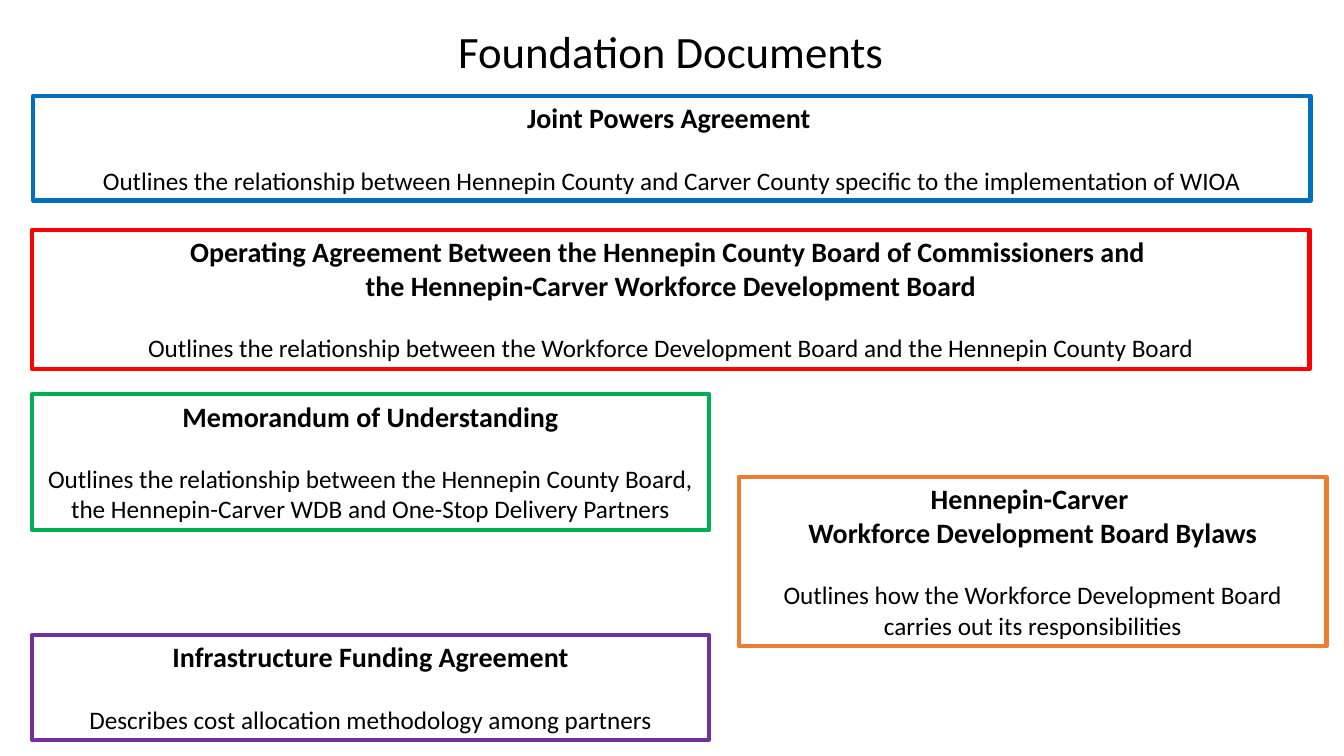
from dataclasses import dataclass

import pptx
import pptx.dml.color
import pptx.enum.shapes
import pptx.enum.text
import pptx.presentation
import pptx.shapes.autoshape
import pptx.slide
import pptx.text.text
import pptx.util


@dataclass(frozen=True)
class Theme:
    font: str = "Calibri"
    text: str = "000000"
    background: str = "FFFFFF"
    blue: str = "0070C0"
    red: str = "FF0000"
    green: str = "00B050"
    orange: str = "ED7D31"
    purple: str = "7030A0"
    title_size: int = 32
    heading_size: int = 20
    body_size: int = 18
    body_gap: int = 22
    border: int = 3


@dataclass(frozen=True)
class Area:
    """Percentages of the slide's width and height."""

    left: float
    top: float
    width: float
    height: float


@dataclass(frozen=True)
class Document:
    area: Area
    color: str
    headings: tuple[str, ...]
    description: str
    filled: bool = False


THEME = Theme()
SLIDE_WIDTH = pptx.util.Inches(13.33)
SLIDE_HEIGHT = pptx.util.Inches(7.5)
LEFT = 2.4
FULL_WIDTH = 95.03
HALF_WIDTH = 50.33
TITLE_AREA = Area(24.6, 2.53, 50.63, 8.53)

DOCUMENTS = (
    Document(
        Area(2.48, 12.67, FULL_WIDTH, 13.87),
        THEME.blue,
        ("Joint Powers Agreement ",),
        "Outlines the relationship between Hennepin County and Carver County "
        "specific to the implementation of WIOA",
        filled=True,
    ),
    Document(
        Area(LEFT, 30.4, FULL_WIDTH, 18.4),
        THEME.red,
        (
            "Operating Agreement Between the Hennepin County Board of Commissioners and ",
            "the Hennepin-Carver Workforce Development Board",
        ),
        "Outlines the relationship between the Workforce Development Board "
        "and the Hennepin County Board",
    ),
    Document(
        Area(LEFT, 52.13, HALF_WIDTH, 18),
        THEME.green,
        ("Memorandum of Understanding",),
        "Outlines the relationship between the Hennepin County Board, "
        "the Hennepin-Carver WDB and One-Stop Delivery Partners",
    ),
    Document(
        Area(54.98, 63.07, 43.73, 22.4),
        THEME.orange,
        ("Hennepin-Carver ", "Workforce Development Board Bylaws"),
        "Outlines how the Workforce Development Board carries out its responsibilities",
    ),
    Document(
        Area(LEFT, 84, HALF_WIDTH, 13.87),
        THEME.purple,
        ("Infrastructure Funding Agreement",),
        "Describes cost allocation methodology among partners",
    ),
)


def rgb(color: str) -> pptx.dml.color.RGBColor:
    return pptx.dml.color.RGBColor.from_string(color)


def place(area: Area) -> tuple[int, int, int, int]:
    return (
        round(SLIDE_WIDTH * area.left / 100),
        round(SLIDE_HEIGHT * area.top / 100),
        round(SLIDE_WIDTH * area.width / 100),
        round(SLIDE_HEIGHT * area.height / 100),
    )


def write(
    paragraph: pptx.text.text._Paragraph, text: str, size: int, bold: bool = False
) -> None:
    paragraph.text = text
    paragraph.alignment = pptx.enum.text.PP_ALIGN.CENTER
    paragraph.font.name = THEME.font
    paragraph.font.size = pptx.util.Pt(size)
    paragraph.font.bold = bold
    paragraph.font.color.rgb = rgb(THEME.text)


def prepare(frame: pptx.text.text.TextFrame) -> None:
    frame.word_wrap = True
    frame.auto_size = pptx.enum.text.MSO_AUTO_SIZE.SHAPE_TO_FIT_TEXT
    frame.vertical_anchor = pptx.enum.text.MSO_ANCHOR.TOP


def draw_title(slide: pptx.slide.Slide, text: str) -> None:
    frame = slide.shapes.add_textbox(*place(TITLE_AREA)).text_frame
    prepare(frame)
    write(frame.paragraphs[0], text, THEME.title_size)


def draw_document(slide: pptx.slide.Slide, document: Document) -> None:
    shape = slide.shapes.add_shape(
        pptx.enum.shapes.MSO_SHAPE.RECTANGLE, *place(document.area)
    )
    shape.shadow.inherit = False
    if document.filled:
        shape.fill.solid()
        shape.fill.fore_color.rgb = rgb(THEME.background)
    else:
        shape.fill.background()
    shape.line.color.rgb = rgb(document.color)
    shape.line.width = pptx.util.Pt(THEME.border)

    frame = shape.text_frame
    prepare(frame)
    for index, heading in enumerate(document.headings):
        paragraph = frame.add_paragraph() if index else frame.paragraphs[0]
        write(paragraph, heading, THEME.heading_size, bold=True)
    description = frame.add_paragraph()
    write(description, document.description, THEME.body_size)
    description.space_before = pptx.util.Pt(THEME.body_gap)


def main() -> None:
    presentation = pptx.Presentation()
    presentation.slide_width = SLIDE_WIDTH
    presentation.slide_height = SLIDE_HEIGHT
    slide = presentation.slides.add_slide(presentation.slide_layouts[6])
    draw_title(slide, "Foundation Documents")
    for document in DOCUMENTS:
        draw_document(slide, document)
    presentation.save("out.pptx")


if __name__ == "__main__":
    main()
